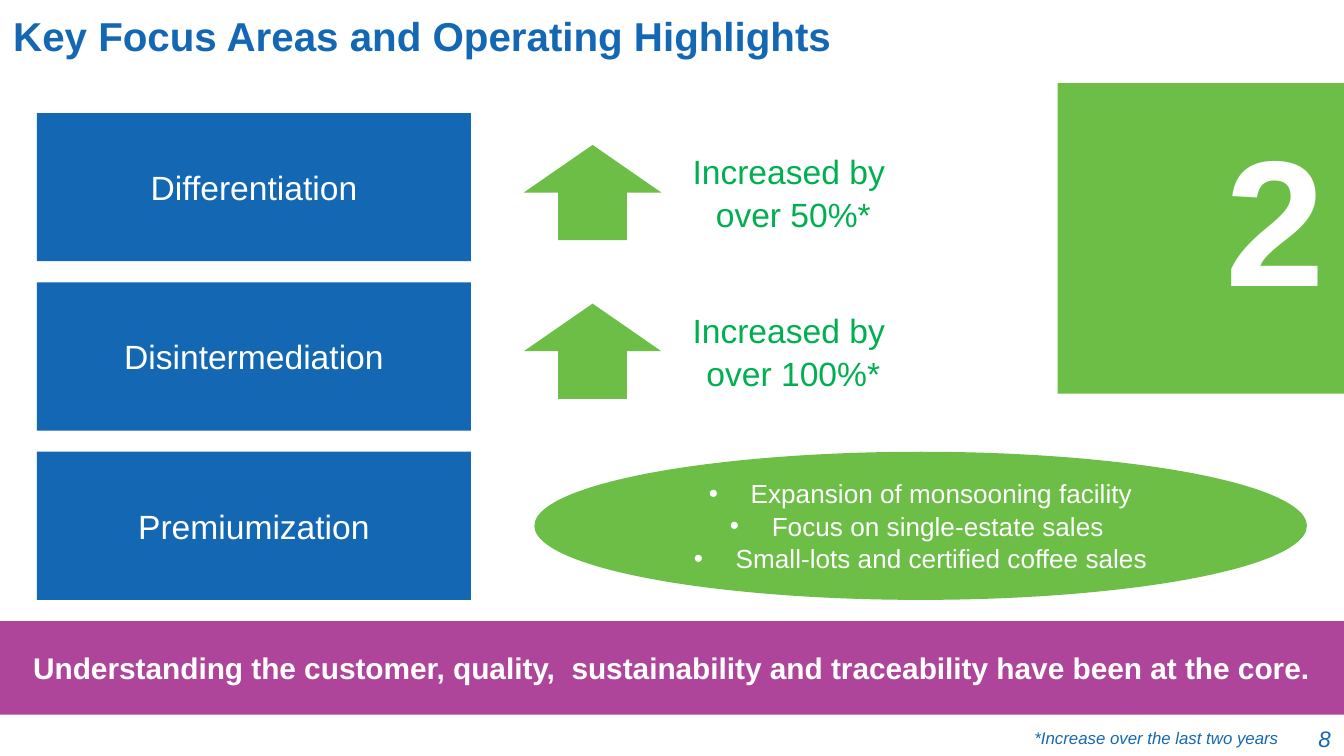
from lxml.etree import SubElement
from pptx import Presentation
from pptx.dml.color import RGBColor
from pptx.enum.shapes import MSO_SHAPE as SHAPE
from pptx.enum.text import MSO_ANCHOR as ANCHOR, PP_ALIGN as ALIGN
from pptx.oxml.ns import qn
from pptx.util import Cm, Pt

BLUE, GREEN, PURPLE = "1468B3", "6CBE46", "AE459A"
WHITE, TEXT_GREEN = "FFFFFF", "00B050"

prs = Presentation()
prs.slide_width, prs.slide_height = Cm(25.4), Cm(14.29)
s = prs.slides.add_slide(prs.slide_layouts[6])


def add_box(kind, x, y, w, h, fill=None):
    """Add a flat shape, or a text box when kind is None; sizes in cm."""
    box = Cm(x), Cm(y), Cm(w), Cm(h)
    if kind is None:
        return s.shapes.add_textbox(*box)
    sp = s.shapes.add_shape(kind, *box)
    sp.shadow.inherit = False
    sp.line.fill.background()
    if fill:
        sp.fill.solid()
        sp.fill.fore_color.rgb = RGBColor.from_string(fill)
    else:
        sp.fill.background()
    return sp


def write(sp, text, size, color, align=ALIGN.CENTER, anchor=ANCHOR.MIDDLE,
          bold=False, italic=False, bullets=False, gap=0, wrap=True):
    """Fill a shape with text, one paragraph per line."""
    tf = sp.text_frame
    tf.text = text
    tf.word_wrap = wrap
    tf.vertical_anchor = anchor
    for i, p in enumerate(tf.paragraphs):
        p.alignment = align
        if i and gap:
            p.space_before = Pt(gap)
        if bullets:
            pPr = p._p.get_or_add_pPr()
            pPr.set("marL", str(Cm(0.79)))
            pPr.set("indent", str(-Cm(0.79)))
            SubElement(pPr, qn("a:buFont"), typeface="Arial")
            SubElement(pPr, qn("a:buChar"), char="•")
        for r in p.runs:
            r.font.name, r.font.size = "Arial", Pt(size)
            r.font.bold, r.font.italic = bold, italic
            r.font.color.rgb = RGBColor.from_string(color)
    return tf


# Section number panel
add_box(SHAPE.RECTANGLE, 19.99, 1.57, 5.41, 5.87, GREEN)
tf = write(add_box(None, 22.73, 1.57, 2.57, 4.37), "2", 96, WHITE,
           ALIGN.RIGHT, ANCHOR.TOP, bold=True)
tf.margin_top = Cm(0.45)

# Title
tf = write(add_box(None, 0, 0, 22.86, 1.02),
           "Key Focus Areas and Operating Highlights", 21.6, BLUE,
           ALIGN.LEFT, ANCHOR.TOP, bold=True)
tf.margin_top = Cm(0.22)

# Bottom banner
write(add_box(SHAPE.RECTANGLE, 0, 11.74, 25.4, 1.77, PURPLE),
      "Understanding the customer, quality,  sustainability and traceability "
      "have been at the core.", 16, WHITE, bold=True)

# Focus areas
for i, area in enumerate(["Differentiation", "Disintermediation", "Premiumization"]):
    write(add_box(SHAPE.RECTANGLE, 0.7, 2.14 + 3.2 * i, 8.2, 2.8, BLUE),
          area, 18, WHITE)

# Increases with up arrows
for i, share in enumerate(["50%", "100%"]):
    y = 2.74 + 3 * i
    write(add_box(SHAPE.OVAL, 10.69, y, 8.61, 1.8),
          f"Increased by \nover {share}*", 18, TEXT_GREEN, gap=1.3)
    add_box(SHAPE.UP_ARROW, 9.9, y, 2.6, 1.8, GREEN)

# Premiumization highlights
write(add_box(SHAPE.OVAL, 10.1, 8.54, 14.6, 2.8, GREEN),
      "Expansion of monsooning facility\n"
      "Focus on single-estate sales \n"
      "Small-lots and certified coffee sales", 14, WHITE, bullets=True, gap=0.5)

# Footnote and page number
write(add_box(None, 19.3, 13.64, 5.16, 0.64), "*Increase over the last two years",
      9, BLUE, ALIGN.LEFT, ANCHOR.TOP, italic=True, wrap=False)
write(add_box(None, 24.31, 13.59, 1.09, 0.76), "8", 12, BLUE, ALIGN.RIGHT, italic=True)

prs.save("out.pptx")
